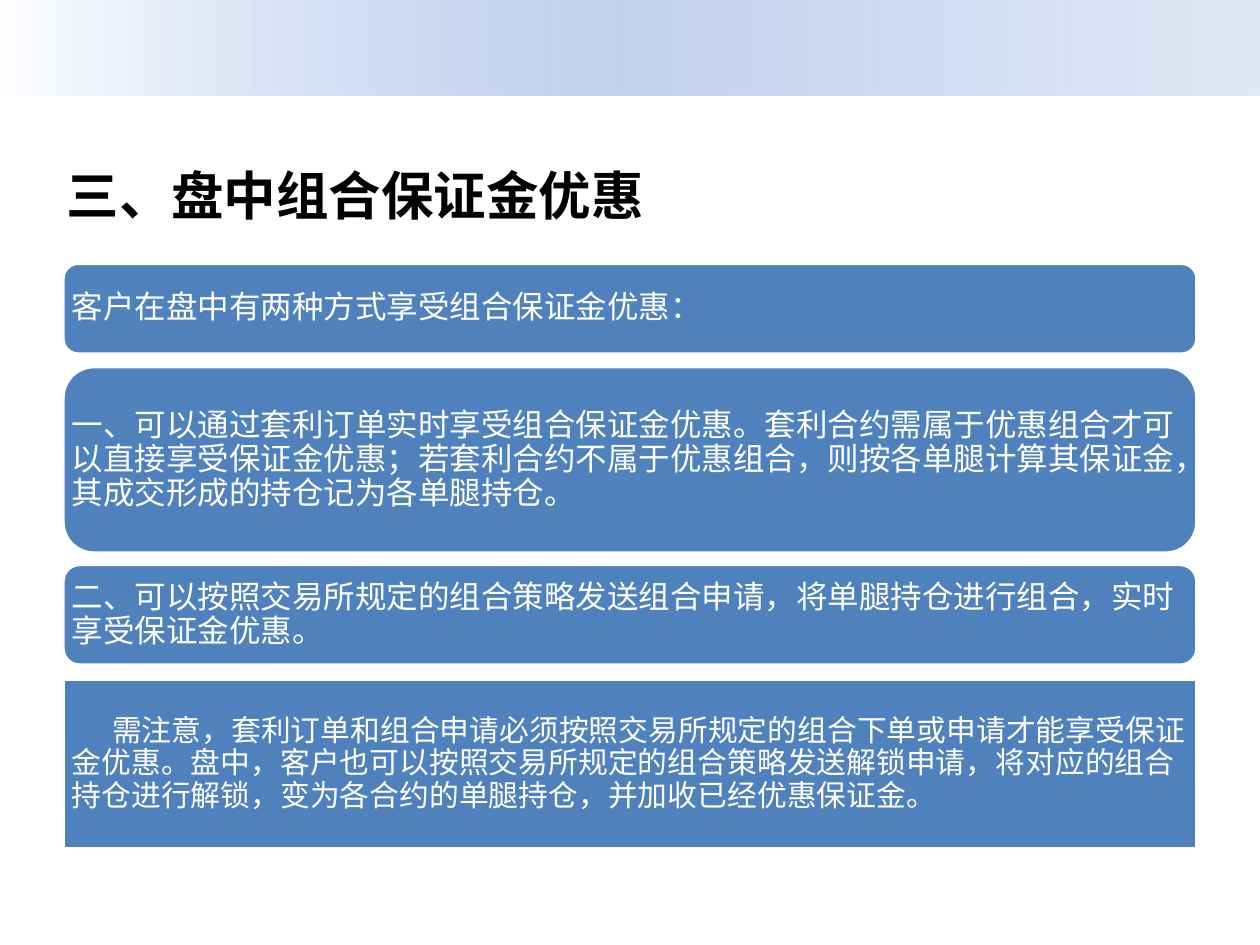
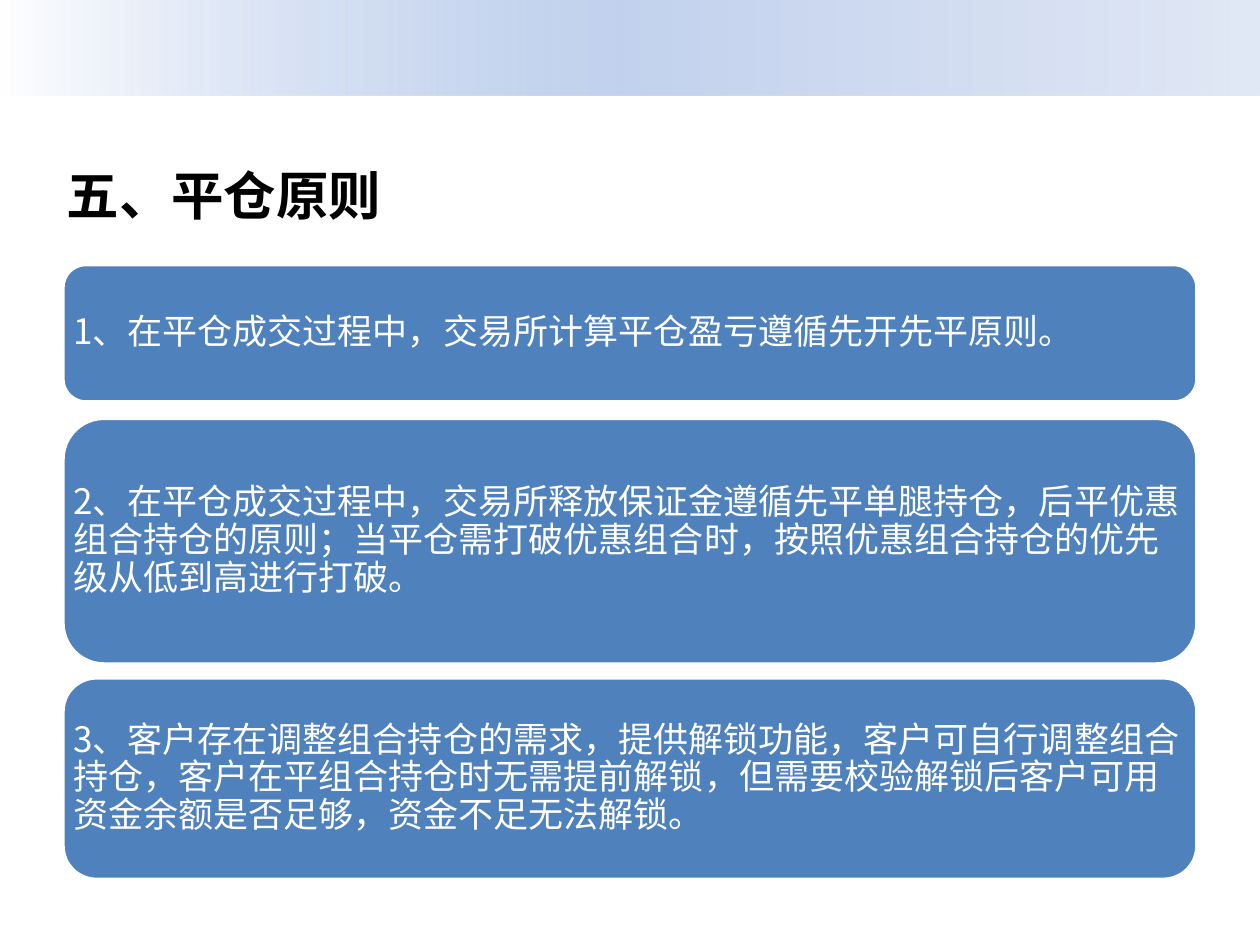
from dataclasses import dataclass

from lxml import etree
from pptx import Presentation
from pptx.dml.color import RGBColor
from pptx.enum.shapes import MSO_SHAPE
from pptx.enum.text import MSO_ANCHOR, PP_ALIGN
from pptx.oxml.ns import qn
from pptx.util import Inches, Pt

RECTANGLE = MSO_SHAPE.RECTANGLE
ROUNDED = MSO_SHAPE.ROUNDED_RECTANGLE
MIDDLE = MSO_ANCHOR.MIDDLE
LEFT = PP_ALIGN.LEFT


@dataclass(frozen=True)
class Theme:
    font: str = "Noto Sans CJK JP"
    title_color: str = "000000"
    panel_color: str = "4F81BD"
    panel_text: str = "FFFFFF"
    panel_border: str = "FFFFFF"
    band_stops: tuple = ((0, "9AB5E4", 0), (50, "C2D1ED", 100), (100, "E1E8F5", 100))
    title_size: int = 30
    margin_size: int = 18
    note_size: int = 17
    closing_size: int = 20


THEME = Theme()
SLIDE_WIDTH, SLIDE_HEIGHT = 10, 7.5
PANEL_LEFT, PANEL_WIDTH = 0.5, 9


@dataclass(frozen=True)
class Panel:
    top: float
    height: float
    text: str
    size: int
    inset: float = 0.07
    outline: int = ROUNDED
    indent: float = 0


MARGIN_PANELS = (
    Panel(2.09, 0.72, "客户在盘中有两种方式享受组合保证金优惠：", THEME.margin_size),
    Panel(2.91, 1.48,
          "一、可以通过套利订单实时享受组合保证金优惠。套利合约需属于优惠组合才可以直接享受保证金优惠；"
          "若套利合约不属于优惠组合，则按各单腿计算其保证金，其成交形成的持仓记为各单腿持仓。",
          THEME.margin_size),
    Panel(4.48, 0.8,
          "二、可以按照交易所规定的组合策略发送组合申请，将单腿持仓进行组合，实时享受保证金优惠。",
          THEME.margin_size),
    Panel(5.39, 1.35,
          "需注意，套利订单和组合申请必须按照交易所规定的组合下单或申请才能享受保证金优惠。"
          "盘中，客户也可以按照交易所规定的组合策略发送解锁申请，将对应的组合持仓进行解锁，"
          "变为各合约的单腿持仓，并加收已经优惠保证金。",
          THEME.note_size, outline=RECTANGLE, indent=0.32),
)

CLOSING_PANELS = (
    Panel(2.1, 1.09, "1、在平仓成交过程中，交易所计算平仓盈亏遵循先开先平原则。",
          THEME.closing_size, 0.08),
    Panel(3.32, 1.95,
          "2、在平仓成交过程中，交易所释放保证金遵循先平单腿持仓，后平优惠组合持仓的原则；"
          "当平仓需打破优惠组合时，按照优惠组合持仓的优先级从低到高进行打破。",
          THEME.closing_size, 0.08),
    Panel(5.38, 1.6,
          "3、客户存在调整组合持仓的需求，提供解锁功能，客户可自行调整组合持仓，"
          "客户在平组合持仓时无需提前解锁，但需要校验解锁后客户可用资金余额是否足够，资金不足无法解锁。",
          THEME.closing_size, 0.08),
)


def add_band(slide):
    band = slide.shapes.add_shape(RECTANGLE, 0, 0, Inches(SLIDE_WIDTH), Inches(0.76))
    band.shadow.inherit = False
    band.line.fill.background()
    band.fill.gradient()
    band.fill.gradient_angle = 0
    stops = band.element.spPr.find(qn("a:gradFill")).find(qn("a:gsLst"))
    for stop in list(stops):
        stops.remove(stop)
    for position, color, opacity in THEME.band_stops:
        stop = etree.SubElement(stops, qn("a:gs"), pos=str(position * 1000))
        shade = etree.SubElement(stop, qn("a:srgbClr"), val=color)
        if opacity < 100:
            etree.SubElement(shade, qn("a:alpha"), val=str(opacity * 1000))


def add_text(slide, box, text, size, color, insets, bold=False):
    text_box = slide.shapes.add_textbox(*map(Inches, box))
    frame = text_box.text_frame
    frame.word_wrap = True
    frame.vertical_anchor = MIDDLE
    horizontal, vertical = map(Inches, insets)
    frame.margin_left = frame.margin_right = horizontal
    frame.margin_top = frame.margin_bottom = vertical
    paragraph = frame.paragraphs[0]
    paragraph.alignment = LEFT
    run = paragraph.add_run()
    run.text = text
    run.font.size = Pt(size)
    run.font.bold = bold
    run.font.color.rgb = RGBColor.from_string(color)
    run.font.name = THEME.font
    properties = run.font._element
    etree.SubElement(properties, qn("a:ea"), typeface=THEME.font)
    return paragraph


def add_title(slide, text):
    add_text(slide, (0.43, 0.92, 9, 1.25), text, THEME.title_size,
             THEME.title_color, (0.1, 0.05), bold=True)


def add_panel(slide, panel):
    box = (PANEL_LEFT, panel.top, PANEL_WIDTH, panel.height)
    shape = slide.shapes.add_shape(panel.outline, *map(Inches, box))
    shape.shadow.inherit = False
    shape.fill.solid()
    shape.fill.fore_color.rgb = RGBColor.from_string(THEME.panel_color)
    shape.line.color.rgb = RGBColor.from_string(THEME.panel_border)
    shape.line.width = Pt(2)
    paragraph = add_text(slide, box, panel.text, panel.size, THEME.panel_text,
                         (panel.inset, panel.inset))
    paragraph.line_spacing = 0.9
    if panel.indent:
        paragraph._p.get_or_add_pPr().set("indent", str(Inches(panel.indent)))


def add_panel_slide(presentation, title, panels):
    slide = presentation.slides.add_slide(presentation.slide_layouts[6])
    add_band(slide)
    add_title(slide, title)
    for panel in panels:
        add_panel(slide, panel)


def main():
    presentation = Presentation()
    presentation.slide_width = Inches(SLIDE_WIDTH)
    presentation.slide_height = Inches(SLIDE_HEIGHT)
    add_panel_slide(presentation, "三、盘中组合保证金优惠", MARGIN_PANELS)
    add_panel_slide(presentation, "五、平仓原则", CLOSING_PANELS)
    presentation.save("out.pptx")


if __name__ == "__main__":
    main()
